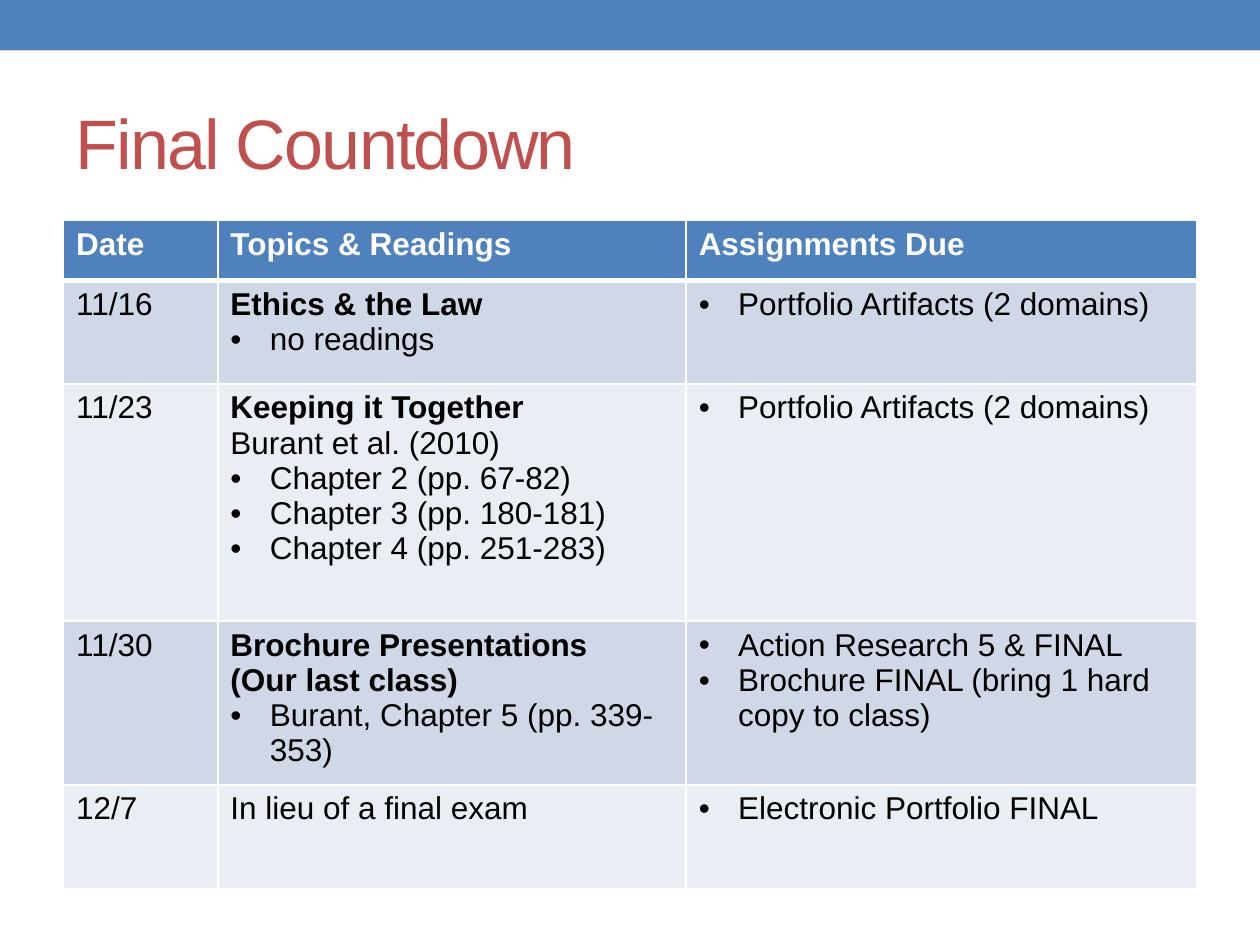
from lxml import etree
from pptx import Presentation
from pptx import util as u
from pptx.dml.color import RGBColor
from pptx.enum import shapes, text
from pptx.oxml import ns

Pt = u.Pt
BLUE, RED, WHITE, BLACK = "4F81BD", "C0504D", "FFFFFF", "000000"
BANDS = ["D0D8E8", "E9EDF4"]


def rgb(value):
    return RGBColor.from_string(value)


class Deck:
    font = "Arial"
    body_size = 18
    bullet_indent = 22.5

    def __init__(self, width, height):
        self.prs = Presentation()
        self.prs.slide_width, self.prs.slide_height = Pt(width), Pt(height)
        self.s = self.prs.slides.add_slide(self.prs.slide_layouts[6])

    def run(self, p, words, size, color, bold=False):
        r = p.add_run()
        r.text = words
        r.font.name, r.font.size, r.font.bold = self.font, Pt(size), bold
        r.font.color.rgb = rgb(color)
        return r

    def bar(self, x, y, w, h, color):
        sp = self.s.shapes.add_shape(shapes.MSO_SHAPE.RECTANGLE, Pt(x), Pt(y), Pt(w), Pt(h))
        sp.shadow.inherit = False
        sp.fill.solid()
        sp.fill.fore_color.rgb = rgb(color)
        sp.line.fill.background()

    def title(self, words, x, y, w, h):
        tf = self.s.shapes.add_textbox(Pt(x), Pt(y), Pt(w), Pt(h)).text_frame
        tf.word_wrap = True
        tf.vertical_anchor = text.MSO_ANCHOR.MIDDLE
        r = self.run(tf.paragraphs[0], words, 40, RED)
        r.font._element.set("spc", "-100")

    def bullet(self, p):
        pPr = p._p.get_or_add_pPr()
        indent = Pt(self.bullet_indent)
        pPr.set("marL", str(indent))
        pPr.set("indent", str(-indent))
        etree.SubElement(pPr, ns.qn("a:buFont"), typeface=self.font)
        etree.SubElement(pPr, ns.qn("a:buChar"), char="•")

    def borders(self, cell, bottom=1, top=1):
        tcPr = cell._tc.get_or_add_tcPr()
        widths = {"lnL": 1, "lnR": 1, "lnT": top, "lnB": bottom}
        for i, (side, width) in enumerate(widths.items()):
            ln = etree.Element(ns.qn("a:" + side), w=str(Pt(width)))
            fill = etree.SubElement(ln, ns.qn("a:solidFill"))
            etree.SubElement(fill, ns.qn("a:srgbClr"), val=WHITE)
            tcPr.insert(i, ln)

    def cell(self, cell, lines, fill, color):
        """A line starts with '* ' for a bullet or '# ' for bold."""
        cell.fill.solid()
        cell.fill.fore_color.rgb = rgb(fill)
        tf = cell.text_frame
        for i, line in enumerate(lines):
            p = tf.add_paragraph() if i else tf.paragraphs[0]
            if line.startswith("* "):
                self.bullet(p)
            self.run(p, line.removeprefix("* ").removeprefix("# "),
                     self.body_size, color, line.startswith("# "))

    def table(self, x, y, widths, heights, rows):
        tbl = self.s.shapes.add_table(len(rows), len(widths), Pt(x), Pt(y),
                                      Pt(sum(widths)), Pt(sum(heights))).table
        for col, width in zip(tbl.columns, widths):
            col.width = Pt(width)
        for i, (row, height) in enumerate(zip(rows, heights)):
            tbl.rows[i].height = Pt(height)
            fill, color = (BANDS[(i - 1) % 2], BLACK) if i else (BLUE, WHITE)
            for j, lines in enumerate(row):
                c = tbl.cell(i, j)
                self.cell(c, lines, fill, color)
                self.borders(c, bottom=1 if i else 3, top=3 if i == 1 else 1)


def main():
    deck = Deck(720, 540)

    # Top band and title
    deck.bar(0, 0, 720, 28.8, BLUE)
    deck.title("Final Countdown", 36, 42, 648, 78)

    # Schedule: each cell is a list of lines
    artifacts = ["* Portfolio Artifacts (2 domains)"]
    schedule = [
        [["# Date"], ["# Topics & Readings"], ["# Assignments Due"]],
        [["11/16"], ["# Ethics & the Law", "* no readings"], artifacts],
        [["11/23"],
         ["# Keeping it Together", "Burant et al. (2010)", "* Chapter 2 (pp. 67-82)",
          "* Chapter 3 (pp. 180-181)", "* Chapter 4 (pp. 251-283)"],
         artifacts],
        [["11/30"],
         ["# Brochure Presentations", "# (Our last class)",
          "* Burant, Chapter 5 (pp. 339-353)"],
         ["* Action Research 5 & FINAL", "* Brochure FINAL (bring 1 hard copy to class)"]],
        [["12/7"], ["In lieu of a final exam"], ["* Electronic Portfolio FINAL"]],
    ]
    deck.table(36.3, 126, [88.2, 267.6, 292], [34.4, 59, 135.6, 89.8, 59], schedule)

    deck.prs.save("out.pptx")


if __name__ == "__main__":
    main()
